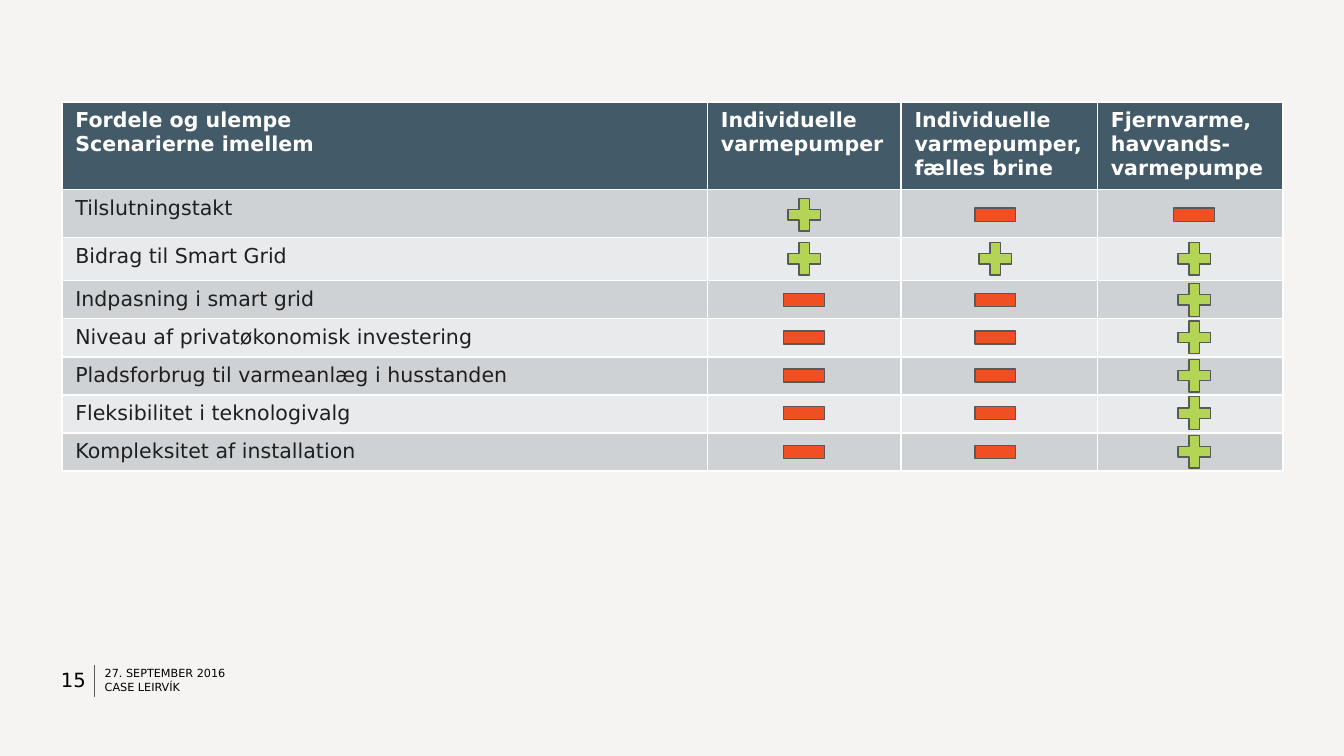
from lxml import etree
from pptx import Presentation
from pptx import util as u
from pptx.dml import color
from pptx.enum import shapes, text
from pptx.oxml import ns

FACE = "DejaVu Sans"
HUES = {
    "page": "F6F4F2", "head": "435A69", "dark": "CFD2D4", "light": "E9EAEB",
    "white": "FFFFFF", "ink": "1F1F1F", "black": "000000", "line": "58595B",
    "plus": "B3D455", "minus": "F04E23",
}
HEADS = [
    "Fordele og ulempe\vScenarierne imellem",
    "Individuelle varmepumper",
    "Individuelle varmepumper, fælles brine",
    "Fjernvarme, havvands-varmepumpe",
]
ROWS = [
    ("Tilslutningstakt", "+--"),
    ("Bidrag til Smart Grid", "+++"),
    ("Indpasning i smart grid", "--+"),
    ("Niveau af privatøkonomisk investering", "--+"),
    ("Pladsforbrug til varmeanlæg i husstanden", "--+"),
    ("Fleksibilitet i teknologivalg", "--+"),
    ("Kompleksitet af installation", "--+"),
]
WIDTHS = [12.2, 3.66, 3.71, 3.51]
HEIGHTS = [1.63, 0.91, 0.81] + [0.71] * 5
MARK_X = [15.2, 18.81, 22.57]
MARK_Y = [4.06, 4.89, 5.67, 6.38, 7.1, 7.81, 8.54]
MARKS = {
    "+": (shapes.MSO_SHAPE.MATH_PLUS, 0.84, "plus"),
    "-": (shapes.MSO_SHAPE.MATH_MINUS, 1.05, "minus"),
}


def hue(name):
    return color.RGBColor.from_string(HUES[name])


def style(para, size, name, bold=False):
    font = para.font
    font.name, font.size, font.bold = FACE, u.Pt(size), bold
    font.color.rgb = hue(name)


deck = Presentation()
deck.slide_width, deck.slide_height = u.Cm(25.4), u.Cm(14.29)
slide = deck.slides.add_slide(deck.slide_layouts[6])
slide.background.fill.solid()
slide.background.fill.fore_color.rgb = hue("page")

rule = slide.shapes.add_connector(
    shapes.MSO_CONNECTOR.STRAIGHT, u.Cm(1.78), u.Cm(12.57), u.Cm(1.78), u.Cm(13.18))
rule.line.color.rgb = hue("line")
rule.line.width = u.Pt(0.25)
etree.SubElement(rule.element.spPr, ns.qn("a:effectLst"))

for words, left, top, width, height, size, align in [
    ("27. SEPTEMBER 2016", 1.98, 12.65, 5.44, 0.18, 6, text.PP_ALIGN.LEFT),
    ("CASE LEIRVÍK", 1.98, 12.9, 5.44, 0.2, 6, text.PP_ALIGN.LEFT),
    ("15", 0.48, 12.42, 1.14, 1.07, 10.5, text.PP_ALIGN.RIGHT),
]:
    frame = slide.shapes.add_textbox(
        u.Cm(left), u.Cm(top), u.Cm(width), u.Cm(height)).text_frame
    frame.word_wrap = True
    frame.margin_left = frame.margin_right = frame.margin_top = frame.margin_bottom = 0
    frame.vertical_anchor = text.MSO_ANCHOR.MIDDLE
    para = frame.paragraphs[0]
    para.text = words
    para.alignment = align
    para.line_spacing = u.Pt(6)
    style(para, size, "black")

table = slide.shapes.add_table(
    len(HEIGHTS), len(WIDTHS), u.Cm(1.17), u.Cm(1.93),
    u.Cm(sum(WIDTHS)), u.Cm(sum(HEIGHTS))).table
for col, width in zip(table.columns, WIDTHS):
    col.width = u.Cm(width)
for row, height in zip(table.rows, HEIGHTS):
    row.height = u.Cm(height)

lines = [HEADS] + [[label, "", "", ""] for label, signs in ROWS]
for r, line in enumerate(lines):
    fill = "head" if r == 0 else "dark" if r % 2 else "light"
    for c, words in enumerate(line):
        cell = table.cell(r, c)
        cell.fill.solid()
        cell.fill.fore_color.rgb = hue(fill)
        para = cell.text_frame.paragraphs[0]
        if words:
            para.text = words
            style(para, 11, "ink" if r else "white", r == 0)
        else:
            etree.SubElement(para._p, ns.qn("a:endParaRPr"), sz="1100")

for y, (label, signs) in zip(MARK_Y, ROWS):
    for x, sign in zip(MARK_X, signs):
        kind, size, name = MARKS[sign]
        mark = slide.shapes.add_shape(
            kind, u.Cm(x - size / 2), u.Cm(y - size / 2), u.Cm(size), u.Cm(size))
        mark.shadow.inherit = False
        mark.fill.solid()
        mark.fill.fore_color.rgb = hue(name)
        mark.line.color.rgb = hue("line")
        mark.line.width = u.Pt(0.75)

deck.save("out.pptx")
